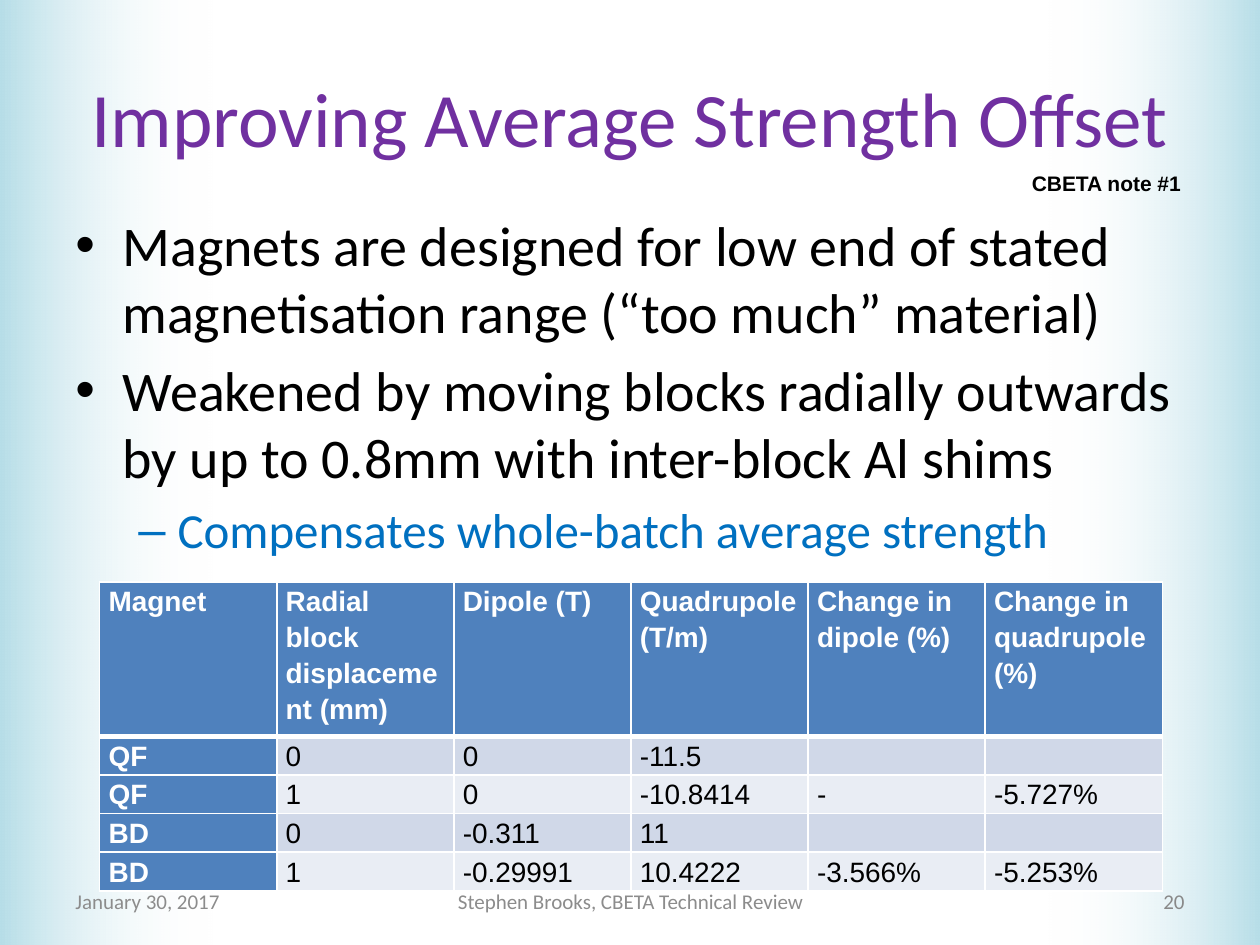
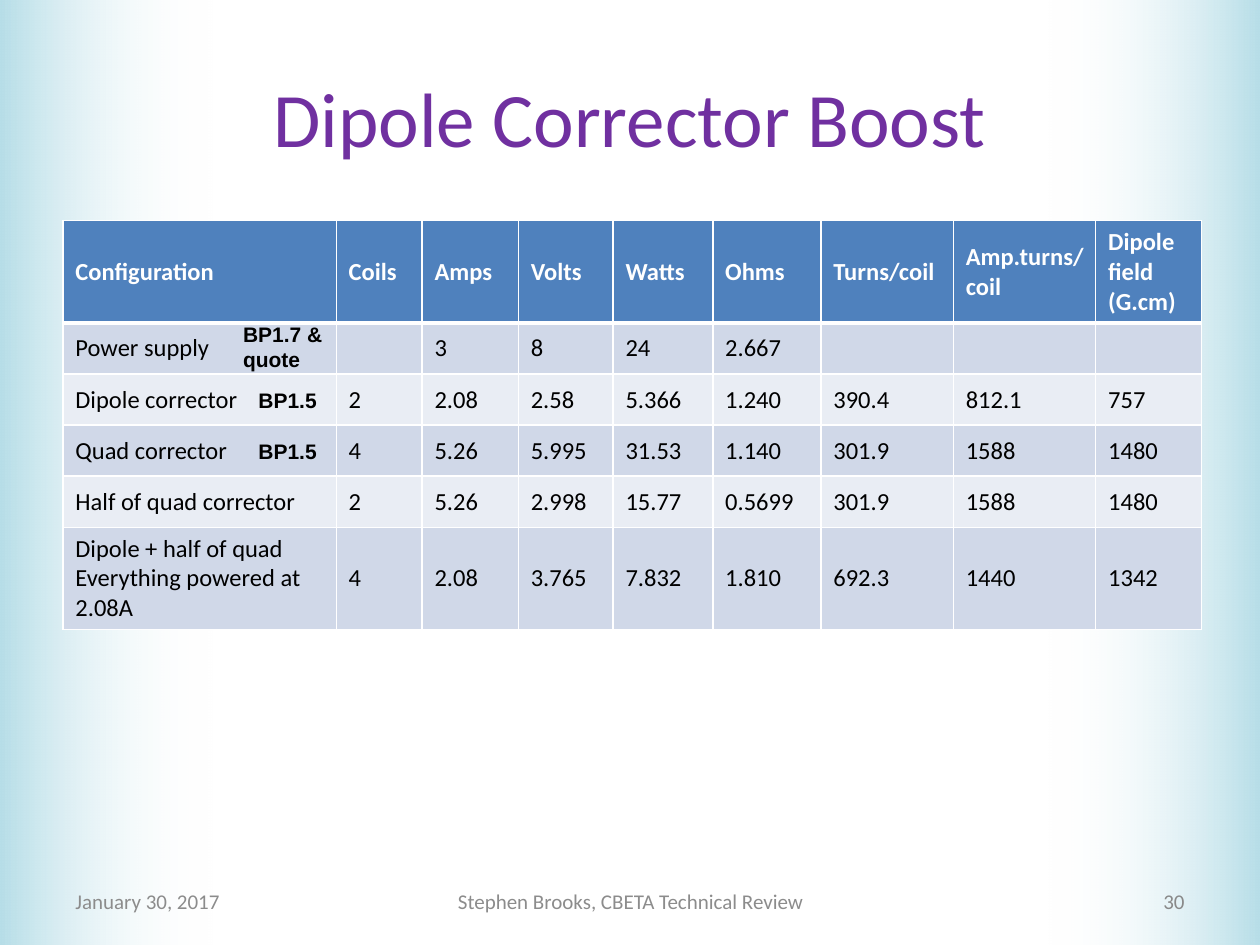
import lxml.etree
import pptx
import pptx.dml.color
import pptx.enum.shapes
import pptx.enum.text
import pptx.oxml.ns
import pptx.util

Cm = pptx.util.Cm
Pt = pptx.util.Pt
qn = pptx.oxml.ns.qn
ALIGN = pptx.enum.text.PP_ALIGN
ANCHOR = pptx.enum.text.MSO_ANCHOR

HUES = {
    "band": "B7DEE8", "white": "FFFFFF", "black": "000000",
    "title": "7030A0", "sub": "0070C0", "foot": "8C8C8C", "page": "898989",
    "head": "4F81BD", "odd": "D0D8E8", "even": "E9EDF4",
}
WIDE, HIGH, EDGE = 25.4, 19.05, 4.29
TITLE = (1.27, 0.76, 22.86, 3.18)

POINTS = [
    (0, "Magnets are designed for low end of stated magnetisation range "
        "(“too much” material)"),
    (0, "Weakened by moving blocks radially outwards by up to 0.8mm with "
        "inter-block Al shims"),
    (1, "Compensates whole-batch average strength"),
]
# Level: bullet, left margin, hanging indent, size, colour
LEVELS = [("•", 0.95, 0.95, 32, "black"), ("–", 2.06, 0.79, 28, "sub")]

SHIMS = [
    ["Magnet", "Radial block displacement (mm)", "Dipole (T)",
     "Quadrupole (T/m)", "Change in dipole (%)", "Change in quadrupole (%)"],
    ["QF", "0", "0", "-11.5", "", ""],
    ["QF", "1", "0", "-10.8414", "-", "-5.727%"],
    ["BD", "0", "-0.311", "11", "", ""],
    ["BD", "1", "-0.29991", "10.4222", "-3.566%", "-5.253%"],
]
BOOST = [
    ["Configuration", "Coils", "Amps", "Volts", "Watts", "Ohms",
     "Turns/coil", "Amp.turns/coil", "Dipole field (G.cm)"],
    ["Power supply", "", "3", "8", "24", "2.667", "", "", ""],
    ["Dipole corrector", "2", "2.08", "2.58", "5.366", "1.240",
     "390.4", "812.1", "757"],
    ["Quad corrector", "4", "5.26", "5.995", "31.53", "1.140",
     "301.9", "1588", "1480"],
    ["Half of quad corrector", "2", "5.26", "2.998", "15.77", "0.5699",
     "301.9", "1588", "1480"],
    ["Dipole + half of quad\nEverything powered at 2.08A", "4", "2.08",
     "3.765", "7.832", "1.810", "692.3", "1440", "1342"],
]


def tint(name):
    return pptx.dml.color.RGBColor.from_string(HUES[name])


def place(box):
    return [Cm(side) for side in box]


def write(frame, text, size=12, hue="black", font="Calibri", bold=False,
          align=None, lines=None, before=None):
    """Append each line of text as a paragraph and return the last one."""
    for line in text.split("\n"):
        para = frame.paragraphs[0] if not frame.text else frame.add_paragraph()
        para.alignment = align
        para.line_spacing = lines
        para.space_before = before
        if not line:
            para._p.get_or_add_endParaRPr().set("sz", str(size * 100))
            continue
        run = para.add_run()
        run.text = line
        run.font.size = Pt(size)
        run.font.name = font
        run.font.bold = bold
        run.font.color.rgb = tint(hue)
    return para


def pad(item, side, top):
    item.margin_left = item.margin_right = Cm(side)
    item.margin_top = item.margin_bottom = Cm(top)


def label(slide, box, text, anchor=ANCHOR.MIDDLE, **form):
    frame = slide.shapes.add_textbox(*place(box)).text_frame
    frame.word_wrap = True
    frame.vertical_anchor = anchor
    write(frame, text, **form)
    return frame


def note(slide, box, text, wrap=False):
    frame = label(slide, box, text, ANCHOR.TOP, font="Arial", bold=True)
    frame.word_wrap = wrap
    pad(frame, 0.1, 0.1)


def add_bands(layout, slide):
    """Draw the fading side bands and move them behind the layout."""
    for left, turn in ((0, 0), (WIDE - EDGE, 180)):
        band = slide.shapes.add_shape(
            pptx.enum.shapes.MSO_SHAPE.RECTANGLE,
            *place((left, 0, EDGE, HIGH)))
        band.rotation = turn
        band.shadow.inherit = False
        band.line.fill.background()
        band.fill.gradient()
        band.fill.gradient_angle = 0
        for stop, hue, spot in zip(band.fill.gradient_stops,
                                   ("band", "white"), (0, 1)):
            stop.color.rgb = tint(hue)
            stop.position = spot
        clear = band._element.findall(".//" + qn("a:srgbClr"))[-1]
        lxml.etree.SubElement(clear, qn("a:alpha"), val="0")
        layout.shapes._spTree.insert(2, band._element)


def add_title(slide, text):
    title = slide.shapes.title
    title.left, title.top, title.width, title.height = place(TITLE)
    title.text_frame.vertical_anchor = ANCHOR.MIDDLE
    write(title.text_frame, text, size=44, hue="title", align=ALIGN.CENTER)


def add_foot(slide, page):
    top, high = 17.65, 1.02
    label(slide, (1.27, top, 5.92, high), "January 30, 2017", hue="foot")
    label(slide, (8.69, top, 8.05, high),
          "Stephen Brooks, CBETA Technical Review", hue="foot",
          align=ALIGN.CENTER)
    label(slide, (18.21, top, 5.92, high), page, hue="page",
          align=ALIGN.RIGHT)


def add_points(slide, box):
    frame = slide.shapes.add_textbox(*place(box)).text_frame
    frame.word_wrap = True
    for level, text in POINTS:
        mark, left, hang, size, hue = LEVELS[level]
        para = write(frame, text, size=size, hue=hue, before=Pt(size * 0.2))
        props = para._p.get_or_add_pPr()
        props.set("marL", str(Cm(left)))
        props.set("indent", str(-Cm(hang)))
        lxml.etree.SubElement(props, qn("a:buFont"), typeface="Arial")
        lxml.etree.SubElement(props, qn("a:buChar"), char=mark)


def rule(cell, row):
    """Give a cell white borders, thick below the header row."""
    props = cell._tc.get_or_add_tcPr()
    wide = {"L": 1, "R": 1, "T": 3 if row == 1 else 1,
            "B": 3 if row == 0 else 1}
    for side, width in wide.items():
        line = lxml.etree.SubElement(props, qn("a:ln" + side),
                                     w=str(Pt(width)))
        fill = lxml.etree.SubElement(line, qn("a:solidFill"))
        lxml.etree.SubElement(fill, qn("a:srgbClr"), val=HUES["white"])


def add_grid(slide, spot, rows, wides, highs, inset, anchor, lead=False,
             **form):
    """Add a banded table; lead also styles the first column as a header."""
    grid = slide.shapes.add_table(
        len(rows), len(wides),
        *place((*spot, sum(wides), sum(highs)))).table
    for col, wide in zip(grid.columns, wides):
        col.width = Cm(wide)
    for row, (texts, high) in enumerate(zip(rows, highs)):
        grid.rows[row].height = Cm(high)
        for col, text in enumerate(texts):
            cell = grid.cell(row, col)
            head = row == 0 or (lead and col == 0)
            rule(cell, row)
            cell.fill.solid()
            cell.fill.fore_color.rgb = tint(
                "head" if head else "odd" if row % 2 else "even")
            pad(cell, *inset)
            cell.vertical_anchor = anchor
            write(cell.text_frame, text, bold=head,
                  hue="white" if head else "black", **form)


def add_slide(deck, layout, title, page):
    slide = deck.slides.add_slide(layout)
    add_title(slide, title)
    add_foot(slide, page)
    return slide


def fill_offset(slide):
    add_points(slide, (1.27, 4.11, 22.86, 12.57))
    add_grid(slide, (2.01, 11.73), SHIMS, [3.57] * 6, [2.87] + [0.72] * 4,
             (0.18, 0), ANCHOR.TOP, lead=True, size=16, font="Arial",
             lines=1.15)
    note(slide, (20.7, 3.33, 3.25, 0.71), "CBETA note #1")


def fill_boost(slide):
    wides = [5.51, 1.73, 1.94, 1.91, 2.01, 2.18, 2.67, 2.87, 2.13]
    add_grid(slide, (1.27, 4.45), BOOST, wides,
             [2.06] + [1.03] * 4 + [2.06], (0.25, 0.13), ANCHOR.MIDDLE,
             size=14)
    for top in (7.72, 8.74):
        note(slide, (5.11, top, 1.4, 0.71), "BP1.5")
    note(slide, (4.8, 6.38, 1.98, 1.22), "BP1.7 & quote", wrap=True)


def main():
    deck = pptx.Presentation()
    deck.slide_width, deck.slide_height = Cm(WIDE), Cm(HIGH)
    layout = deck.slide_layouts[5]
    offset = add_slide(deck, layout, "Improving Average Strength Offset", "20")
    add_bands(layout, offset)
    fill_offset(offset)
    boost = add_slide(deck, layout, "Dipole Corrector Boost", "30")
    fill_boost(boost)
    deck.save("out.pptx")


if __name__ == "__main__":
    main()
